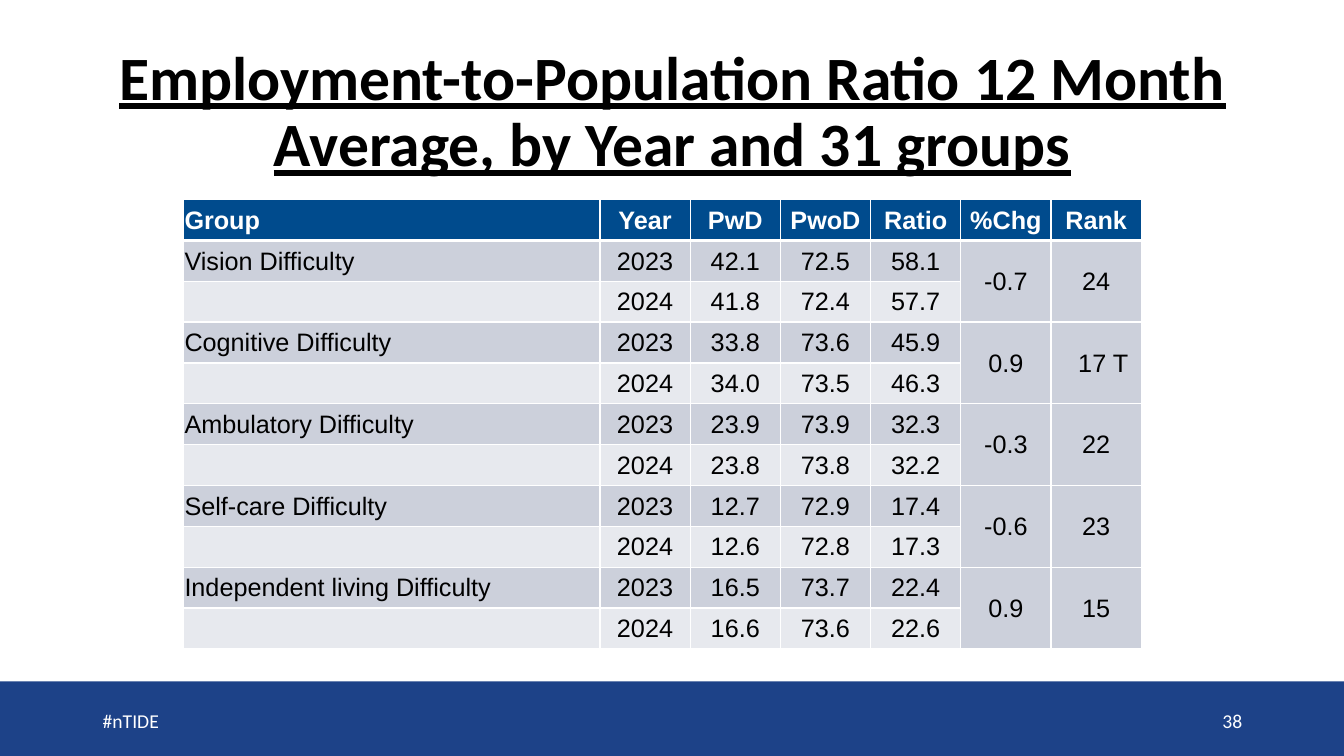
from lxml import etree
from pptx import Presentation
from pptx.dml.color import RGBColor
from pptx.enum import shapes, text
from pptx.oxml import ns
from pptx.util import Inches, Pt

COLORS = {"white": "FFFFFF", "black": "000000", "band": "1D4288",
          "head": "004B8D", "dark": "CCD0DB", "light": "E7E9EE"}
LEFT, MID, RIGHT = text.PP_ALIGN.LEFT, text.PP_ALIGN.CENTER, text.PP_ALIGN.RIGHT
HEADS = ["Group", "Year", "PwD", "PwoD", "Ratio", "%Chg", "Rank"]
YEARS = ["2023", "2024"]
# Group, figures for each year, change, rank
GROUPS = [
    ("Vision Difficulty", ["42.1", "72.5", "58.1"], ["41.8", "72.4", "57.7"], "-0.7", "24"),
    ("Cognitive Difficulty", ["33.8", "73.6", "45.9"], ["34.0", "73.5", "46.3"], "0.9", "17 T"),
    ("Ambulatory Difficulty", ["23.9", "73.9", "32.3"], ["23.8", "73.8", "32.2"], "-0.3", "22"),
    ("Self-care Difficulty", ["12.7", "72.9", "17.4"], ["12.6", "72.8", "17.3"], "-0.6", "23"),
    ("Independent living Difficulty", ["16.5", "73.7", "22.4"], ["16.6", "73.6", "22.6"], "0.9", "15"),
]


def color(name):
    return RGBColor.from_string(COLORS[name])


def write(frame, words, size=18, face="Arial", ink="black", align=LEFT,
          bold=False, under=False, space=None):
    para = frame.paragraphs[0]
    para.alignment = align
    if space:
        para.line_spacing = space
    font = para.font
    if words:
        run = para.add_run()
        run.text = words
        font = run.font
    font.size, font.name = Pt(size), face
    font.bold, font.underline = bold, under
    font.color.rgb = color(ink)


def add_title(slide):
    title = slide.shapes.title
    title.left, title.top = Inches(0.92), Inches(0.4)
    title.width, title.height = Inches(11.5), Inches(1.45)
    frame = title.text_frame
    frame.word_wrap = True
    frame.auto_size = text.MSO_AUTO_SIZE.NONE
    frame.vertical_anchor = text.MSO_ANCHOR.MIDDLE
    write(frame, "Employment-to-Population Ratio 12 Month Average, by Year and 31 groups",
          size=44, face="Calibri", align=MID, bold=True, under=True, space=0.9)


def add_band(slide):
    band = slide.shapes.add_shape(shapes.MSO_SHAPE.RECTANGLE, Inches(0), Inches(6.76),
                                  Inches(13.33), Inches(0.74))
    band.shadow.inherit = False
    band.fill.solid()
    band.fill.fore_color.rgb = color("band")
    band.line.fill.background()


def add_note(slide, left, words, align):
    box = slide.shapes.add_textbox(Inches(left), Inches(6.95), Inches(3), Inches(0.4))
    frame = box.text_frame
    frame.word_wrap = True
    frame.vertical_anchor = text.MSO_ANCHOR.MIDDLE
    write(frame, words, size=14, face="Calibri", ink="white", align=align)


def set_edges(cell, top, base):
    """Draw white cell borders; top and base are widths in points."""
    props = cell._tc.get_or_add_tcPr()
    for i, (side, width) in enumerate([("L", 1), ("R", 1), ("T", top), ("B", base)]):
        line = etree.Element(ns.qn(f"a:ln{side}"), w=str(Pt(width)))
        fill = etree.SubElement(line, ns.qn("a:solidFill"))
        etree.SubElement(fill, ns.qn("a:srgbClr"), val=COLORS["white"])
        props.insert(i, line)


def fill_cell(cell, row, col, words):
    head = row == 0
    shade = "head" if head else "dark" if row % 2 else "light"
    cell.fill.solid()
    cell.fill.fore_color.rgb = color(shade)
    set_edges(cell, 3 if row == 1 else 1, 3 if head else 1)
    cell.vertical_anchor = text.MSO_ANCHOR.MIDDLE
    cell.margin_left = Inches(0.15 if words.endswith(" T") else 0.01)
    cell.margin_right = cell.margin_top = Inches(0.01)
    cell.margin_bottom = 0
    write(cell.text_frame, words, ink="white" if head else "black",
          align=MID if col else LEFT, bold=head)


def add_grid(slide):
    rows = [HEADS]
    for name, old, new, change, rank in GROUPS:
        rows.append([name, YEARS[0], *old, change, rank])
        rows.append(["", YEARS[1], *new, "", ""])
    grid = slide.shapes.add_table(len(rows), len(HEADS), Inches(1.82), Inches(1.98),
                                  Inches(9.51), Inches(4.46)).table
    for i, col in enumerate(grid.columns):
        col.width = Inches(0.895 if i else 4.13)
    for r, row in enumerate(rows):
        grid.rows[r].height = Inches(4.46 / len(rows))
        for c, words in enumerate(row):
            fill_cell(grid.cell(r, c), r, c, words)
    for r in range(1, len(rows), 2):
        for c in (5, 6):
            grid.cell(r, c).merge(grid.cell(r + 1, c))


def main():
    deck = Presentation()
    deck.slide_width, deck.slide_height = Inches(13.33), Inches(7.5)
    slide = deck.slides.add_slide(deck.slide_layouts[5])
    add_band(slide)
    add_title(slide)
    add_note(slide, 0.92, "#nTIDE", LEFT)
    add_note(slide, 9.42, "38", RIGHT)
    add_grid(slide)
    deck.save("out.pptx")


if __name__ == "__main__":
    main()
